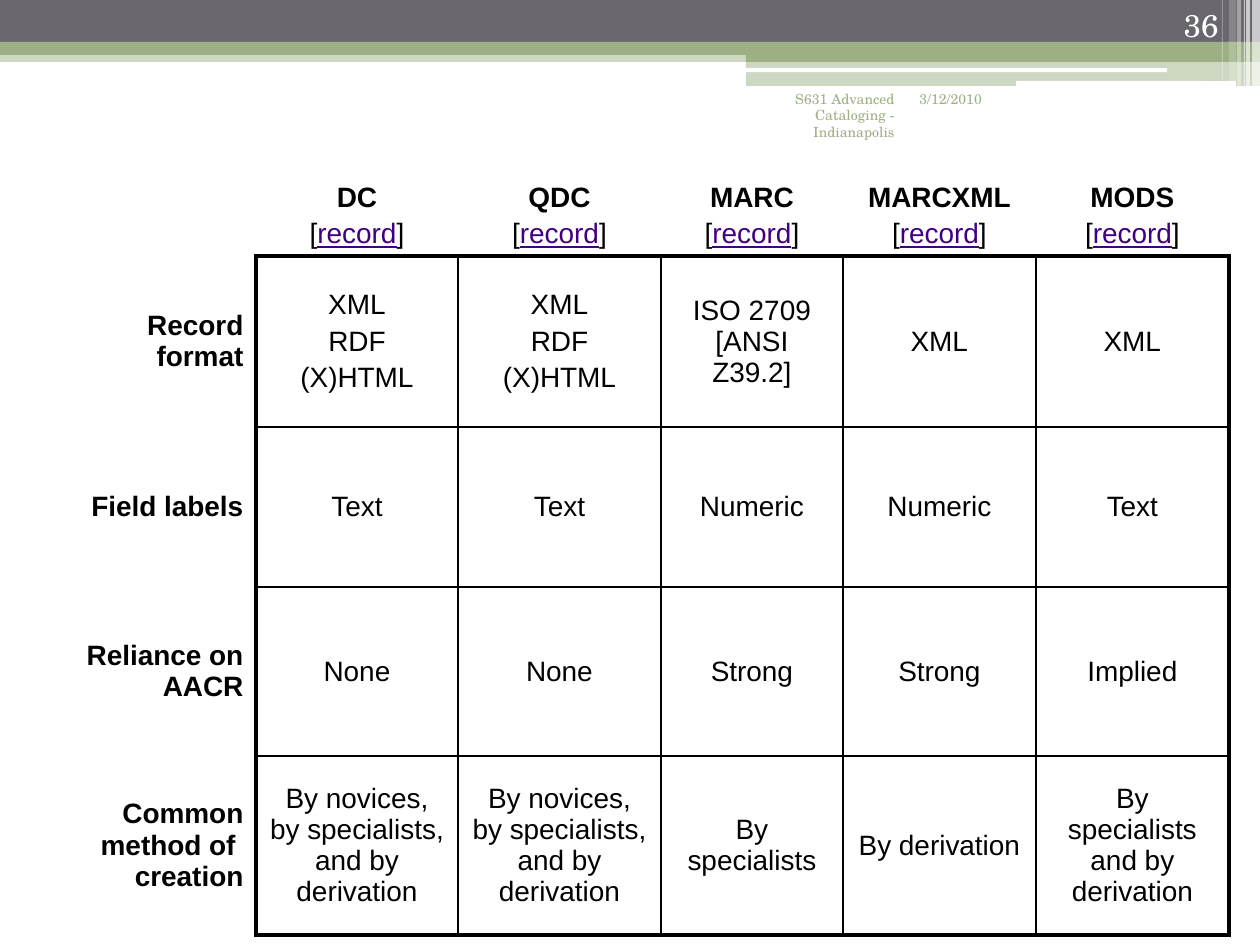
from dataclasses import dataclass

from lxml import etree
from pptx import Presentation
from pptx.dml.color import RGBColor
from pptx.enum.shapes import MSO_SHAPE
from pptx.enum.text import MSO_ANCHOR, PP_ALIGN
from pptx.oxml.ns import qn
from pptx.util import Pt

RECTANGLE, ROUNDED = MSO_SHAPE.RECTANGLE, MSO_SHAPE.ROUNDED_RECTANGLE
LEFT, CENTER, RIGHT = PP_ALIGN.LEFT, PP_ALIGN.CENTER, PP_ALIGN.RIGHT
TOP, MIDDLE, BOTTOM = MSO_ANCHOR.TOP, MSO_ANCHOR.MIDDLE, MSO_ANCHOR.BOTTOM
PX = 914400 / 126


@dataclass(frozen=True)
class Theme:
    gray: str = "69676D"
    green: str = "9CB084"
    white: str = "FFFFFF"
    black: str = "000000"
    link: str = "410082"
    table_font: str = "Arial"
    footer_font: str = "TeX Gyre Schola"
    table_size: int = 16
    footer_size: int = 8
    number_size: int = 18
    thin: float = 1
    thick: float = 2.25


theme = Theme()


def emu(*lengths):
    """Turn px lengths into EMU."""
    return [round(length * PX) for length in lengths]


def write_text(frame, text, *, size, font, color, align=LEFT, bold=False, before=0):
    """Write one paragraph per line; the word 'record' in brackets looks like a link."""
    for index, line in enumerate(text.split("\n")):
        paragraph = frame.paragraphs[0] if index == 0 else frame.add_paragraph()
        paragraph.alignment = align
        paragraph.space_before = Pt(before)
        linked = line == "[record]"
        for part in ("[", "record", "]") if linked else (line,):
            run = paragraph.add_run()
            run.text = part
            run.font.size = Pt(size)
            run.font.name = font
            run.font.bold = bold and not linked
            run.font.underline = part == "record"
            run.font.color.rgb = RGBColor.from_string(theme.link if part == "record" else color)


presentation = Presentation()
presentation.slide_width, presentation.slide_height = emu(1260, 945)
slide = presentation.slides.add_slide(presentation.slide_layouts[6])

# Header bands: left, top, width, height, preset, colour, opacity in percent
bands = [
    (0, 50, 1260, 12, RECTANGLE, theme.green, 50),
    (0, 0, 1260, 43, RECTANGLE, theme.gray, 100),
    (0, 42, 1260, 13, RECTANGLE, theme.green, 100),
    (746, 49, 514, 13, RECTANGLE, theme.green, 100),
    (746, 61, 514, 25, RECTANGLE, theme.green, 50),
    (745, 68, 422, 4, ROUNDED, theme.white, 100),
    (1016, 81, 220, 5, ROUNDED, theme.white, 100),
    (1252, 0, 8, 86, RECTANGLE, theme.white, 65),
    (1246, 0, 4, 86, RECTANGLE, theme.white, 65),
    (1244, 0, 1, 86, RECTANGLE, theme.white, 60),
    (1237, 0, 4, 86, RECTANGLE, theme.white, 40),
    (1229, 0, 7, 81, RECTANGLE, theme.white, 20),
    (1222, 0, 1, 81, RECTANGLE, theme.white, 30),
]
for left, top, width, height, preset, color, opacity in bands:
    band = slide.shapes.add_shape(preset, *emu(left, top, width, height))
    band.shadow.inherit = False
    band.line.fill.background()
    band.fill.solid()
    band.fill.fore_color.rgb = RGBColor.from_string(color)
    if opacity < 100:
        color_element = band.fill._xPr.find(".//" + qn("a:srgbClr"))
        etree.SubElement(color_element, qn("a:alpha"), val=str(opacity * 1000))

# Comparison table
column_widths = [193, 202, 203, 182, 193, 193]
row_heights = [130, 171, 160, 169, 179]
formats = "XML\nRDF\n(X)HTML"
novices = "By novices, by specialists, and by derivation"
rows = [
    [""] + [f"{name}\n[record]" for name in ("DC", "QDC", "MARC", "MARCXML", "MODS")],
    ["Record format", formats, formats, "ISO 2709 [ANSI Z39.2]", "XML", "XML"],
    ["Field labels", "Text", "Text", "Numeric", "Numeric", "Text"],
    ["Reliance on AACR", "None", "None", "Strong", "Strong", "Implied"],
    ["Common method of  creation", novices, novices, "By specialists", "By derivation",
     "By specialists and by derivation"],
]
last_row, last_column = len(rows) - 1, len(column_widths) - 1
table = slide.shapes.add_table(
    len(rows), len(column_widths), *emu(63, 126, sum(column_widths), sum(row_heights))).table
table.first_row = table.horz_banding = False
for column, width in zip(table.columns, emu(*column_widths)):
    column.width = width
for row, height in zip(table.rows, emu(*row_heights)):
    row.height = height

for r, texts in enumerate(rows):
    for c, text in enumerate(texts):
        cell = table.cell(r, c)
        cell.vertical_anchor = BOTTOM if r == 0 else MIDDLE
        if text:
            write_text(cell.text_frame, text, size=theme.table_size, font=theme.table_font,
                       color=theme.black, align=CENTER if c else RIGHT,
                       bold=r == 0 or c == 0, before=3.2)

        # Thick frame round the body, thin lines inside it, none round the headings
        body = r > 0 and c > 0
        edges = {
            "a:lnL": (body or (r > 0 and c == 1), c == 1),
            "a:lnR": (r > 0, c in (0, last_column)),
            "a:lnT": (body, r == 1),
            "a:lnB": (c > 0, r in (0, last_row)),
        }
        properties = cell._tc.get_or_add_tcPr()
        for tag, (visible, heavy) in edges.items():
            width = Pt(theme.thick if heavy else theme.thin)
            line = etree.SubElement(properties, qn(tag), w=str(width))
            if visible:
                fill = etree.SubElement(line, qn("a:solidFill"))
                etree.SubElement(fill, qn("a:srgbClr"), val=theme.black)
            else:
                etree.SubElement(line, qn("a:noFill"))
        cell.fill.solid()
        cell.fill.fore_color.rgb = RGBColor.from_string(theme.white)

# Date, slide number and footer: box, text, size, colour, alignment, anchor
labels = [
    ((907, 84, 132, 63), "3/12/2010", theme.footer_size, theme.green, LEFT, TOP),
    ((1126, 0, 105, 50), "36", theme.number_size, theme.white, RIGHT, BOTTOM),
    ((725, 84, 182, 63), "S631 Advanced Cataloging - Indianapolis",
     theme.footer_size, theme.green, RIGHT, TOP),
]
for box, text, size, color, align, anchor in labels:
    frame = slide.shapes.add_textbox(*emu(*box)).text_frame
    frame.word_wrap = True
    frame.vertical_anchor = anchor
    write_text(frame, text, size=size, font=theme.footer_font, color=color, align=align)

presentation.save("out.pptx")
